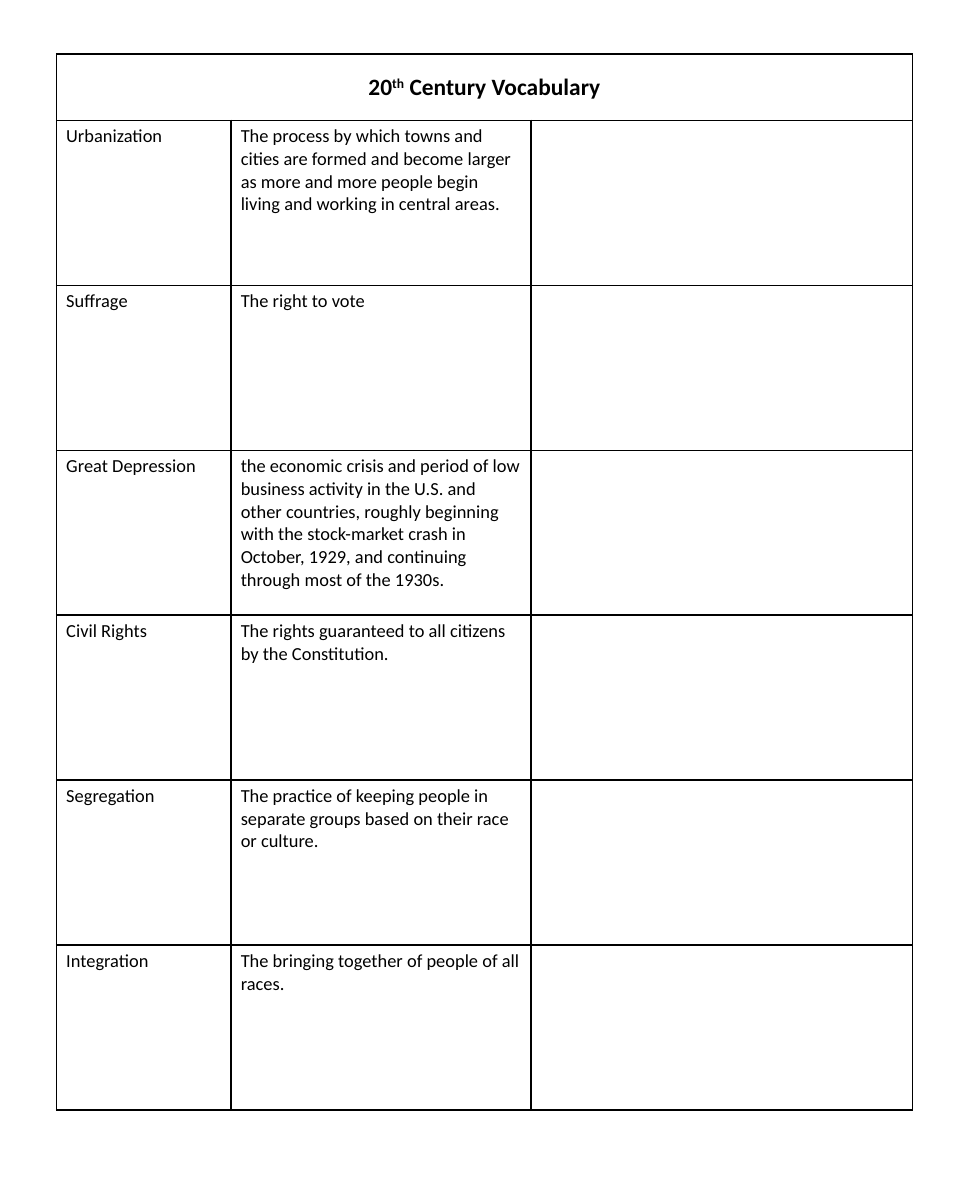
"""Build a one-page vocabulary table for the 20th century."""
from lxml import etree
from pptx import Presentation
from pptx.dml.color import RGBColor
from pptx.enum import text
from pptx.oxml import ns
from pptx.util import Inches, Pt

COLORS = {"ink": "000000", "paper": "FFFFFF"}
HEADING = {"size": Pt(14), "bold": True}
BODY = {"size": Pt(11), "bold": False}
CELL = {
    "margin_left": Inches(0.08),
    "margin_right": Inches(0.08),
    "margin_top": Inches(0.04),
    "margin_bottom": Inches(0.04),
}
COLUMN_WIDTHS = [1.45, 2.49, 3.17]
HEADING_HEIGHT, ENTRY_HEIGHT = 0.55, 1.37
ENTRIES = [
    ("Urbanization", "The process by which towns and cities are formed and become larger "
     "as more and more people begin living and working in central areas."),
    ("Suffrage", "The right to vote"),
    ("Great Depression", "the economic crisis and period of low business activity in the U.S. "
     "and other countries, roughly beginning with the stock-market crash in October, 1929, "
     "and continuing through most of the 1930s."),
    ("Civil Rights", "The rights guaranteed to all citizens by the Constitution."),
    ("Segregation", "The practice of keeping people in separate groups based on their race "
     "or culture."),
    ("Integration", "The bringing together of people of all races."),
]


def add_span(para, words, style):
    span = para.add_run()
    span.text = words
    span.font.name = "Calibri"
    span.font.color.rgb = RGBColor.from_string(COLORS["ink"])
    for name, value in style.items():
        setattr(span.font, name, value)
    return span


def add_borders(cell):
    properties = cell._tc.get_or_add_tcPr()
    for position, side in enumerate(["lnL", "lnR", "lnT", "lnB"]):
        line = etree.Element(ns.qn(f"a:{side}"), w=str(Pt(1)))
        fill = etree.SubElement(line, ns.qn("a:solidFill"))
        etree.SubElement(fill, ns.qn("a:srgbClr"), val=COLORS["ink"])
        properties.insert(position, line)


deck = Presentation()
deck.slide_width, deck.slide_height = Inches(8), Inches(10)
page = deck.slides.add_slide(deck.slide_layouts[6])

row_heights = [HEADING_HEIGHT] + [ENTRY_HEIGHT] * len(ENTRIES)
frame = page.shapes.add_table(
    len(row_heights), len(COLUMN_WIDTHS), Inches(0.47), Inches(0.45),
    Inches(sum(COLUMN_WIDTHS)), Inches(sum(row_heights)))
table = frame.table
table.first_row = table.horz_banding = False
for column, width in zip(table.columns, COLUMN_WIDTHS):
    column.width = Inches(width)
for row, height in zip(table.rows, row_heights):
    row.height = Inches(height)

for cell in table.iter_cells():
    for name, value in CELL.items():
        setattr(cell, name, value)
    cell.fill.solid()
    cell.fill.fore_color.rgb = RGBColor.from_string(COLORS["paper"])
    add_borders(cell)

heading = table.cell(0, 0)
heading.merge(table.cell(0, len(COLUMN_WIDTHS) - 1))
heading.vertical_anchor = text.MSO_ANCHOR.MIDDLE
para = heading.text_frame.paragraphs[0]
para.alignment = text.PP_ALIGN.CENTER
add_span(para, "20", HEADING)
ordinal = add_span(para, "th", HEADING)
ordinal._r.get_or_add_rPr().set("baseline", "30000")
add_span(para, " Century Vocabulary", HEADING)

for row_number, entry in enumerate(ENTRIES, start=1):
    for column_number, words in enumerate(entry):
        cell = table.cell(row_number, column_number)
        add_span(cell.text_frame.paragraphs[0], words, BODY)

deck.save("out.pptx")
